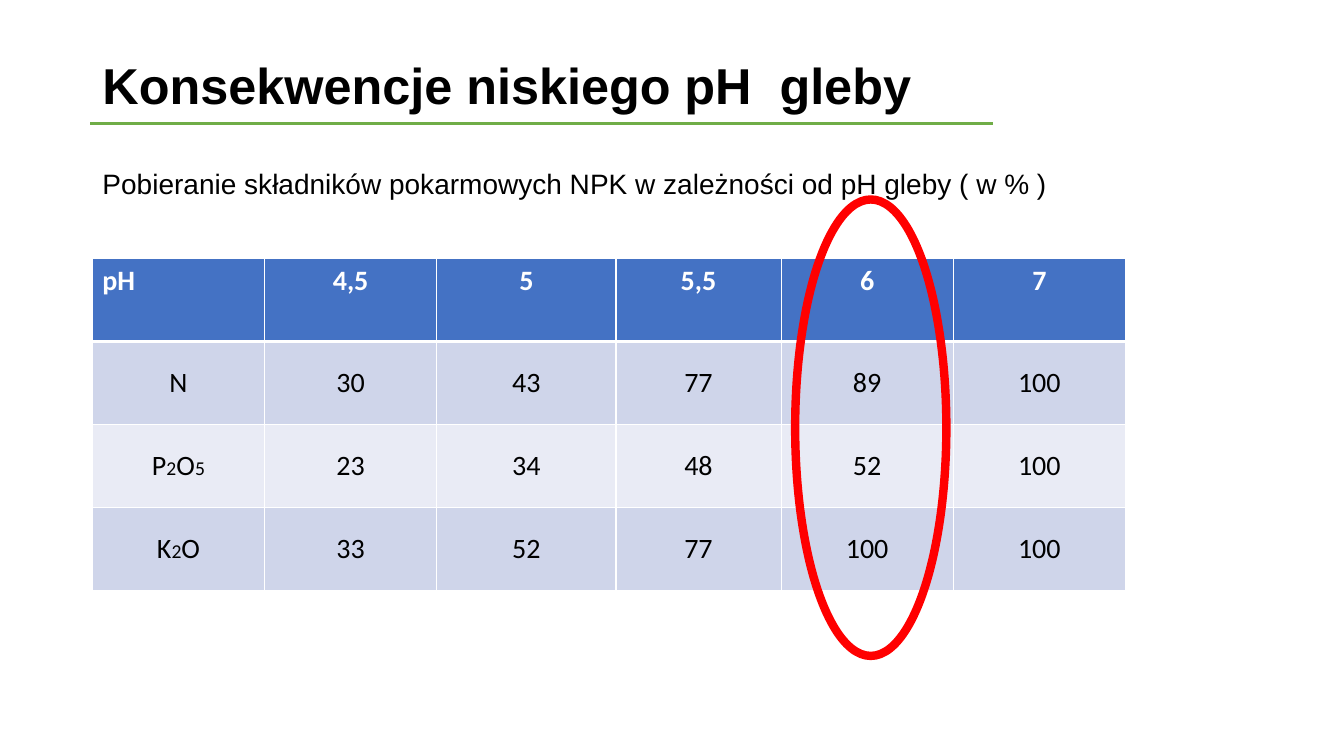
from dataclasses import dataclass

from lxml import etree
from pptx import Presentation
from pptx.dml.color import RGBColor
from pptx.enum.shapes import MSO_CONNECTOR, MSO_SHAPE
from pptx.enum.text import MSO_ANCHOR, MSO_AUTO_SIZE, PP_ALIGN
from pptx.oxml.ns import qn
from pptx.util import Pt

STRAIGHT = MSO_CONNECTOR.STRAIGHT
OVAL = MSO_SHAPE.OVAL
TOP, MIDDLE = MSO_ANCHOR.TOP, MSO_ANCHOR.MIDDLE
LEFT, CENTER = PP_ALIGN.LEFT, PP_ALIGN.CENTER
NO_FIT = MSO_AUTO_SIZE.NONE


@dataclass(frozen=True)
class Theme:
    ink: str = "000000"
    paper: str = "FFFFFF"
    rule: str = "70AD47"
    header: str = "4472C4"
    band_dark: str = "CFD5EA"
    band_light: str = "E9EBF5"
    highlight: str = "FF0000"
    heading_font: str = "Arial"
    table_font: str = "Calibri"
    title_size: int = 36
    text_size: int = 20
    index_size: int = 14


THEME = Theme()
COLUMN_WIDTHS = [123, 123, 128, 118, 123, 123]
UPTAKE = [
    ["pH", "4,5", "5", "5,5", "6", "7"],
    ["N", "30", "43", "77", "89", "100"],
    ["P2O5", "23", "34", "48", "52", "100"],
    ["K2O", "33", "52", "77", "100", "100"],
]


def color(value):
    return RGBColor.from_string(value)


def add_span(para, text, font, size, ink, bold=False):
    span = para.add_run()
    span.text = text
    span.font.name = font
    span.font.size = Pt(size)
    span.font.bold = bold
    span.font.color.rgb = color(ink)


def fill_placeholder(holder, box, text, size, anchor, bold=False):
    holder.left, holder.top, holder.width, holder.height = map(Pt, box)
    frame = holder.text_frame
    frame.word_wrap = True
    frame.auto_size = NO_FIT
    frame.vertical_anchor = anchor
    para = frame.paragraphs[0]
    properties = para._p.get_or_add_pPr()
    properties.set("marL", "0")
    properties.set("indent", "0")
    etree.SubElement(properties, qn("a:buNone"))
    para.alignment = LEFT
    para.line_spacing = 0.9
    para.space_before = Pt(0)
    add_span(para, text, THEME.heading_font, size, THEME.ink, bold)


def add_rule(page, box):
    left, top, width, _ = box
    rule = page.shapes.add_connector(
        STRAIGHT, Pt(left + width), Pt(top), Pt(left), Pt(top))
    rule.line.color.rgb = color(THEME.rule)
    rule.line.width = Pt(2)
    etree.SubElement(rule._element.spPr, qn("a:effectLst"))


def set_borders(cell, bottom_width):
    properties = cell._tc.get_or_add_tcPr()
    widths = {"lnL": 1, "lnR": 1, "lnT": 1, "lnB": bottom_width}
    for position, (side, width) in enumerate(widths.items()):
        border = etree.Element(qn(f"a:{side}"), w=str(Pt(width)))
        fill = etree.SubElement(border, qn("a:solidFill"))
        etree.SubElement(fill, qn("a:srgbClr"), val=THEME.paper)
        properties.insert(position, border)


def add_cell_text(cell, text, is_header, is_label):
    para = cell.text_frame.paragraphs[0]
    para.alignment = LEFT if is_header and is_label else CENTER
    ink = THEME.paper if is_header else THEME.ink
    spans = text if is_label and not is_header else [text]
    for part in spans:
        is_index = is_label and part.isdigit()
        size = THEME.index_size if is_index else THEME.text_size
        add_span(para, part, THEME.table_font, size, ink, is_header)


def add_uptake_table(page, box):
    grid = page.shapes.add_table(
        len(UPTAKE), len(COLUMN_WIDTHS), *map(Pt, box)).table
    for column, width in zip(grid.columns, COLUMN_WIDTHS):
        column.width = Pt(width)
    bands = [THEME.band_light, THEME.band_dark]
    for row, values in enumerate(UPTAKE):
        is_header = row == 0
        grid.rows[row].height = Pt(box[3] / len(UPTAKE))
        for column, text in enumerate(values):
            cell = grid.cell(row, column)
            cell.vertical_anchor = TOP if is_header else MIDDLE
            cell.fill.solid()
            cell.fill.fore_color.rgb = color(
                THEME.header if is_header else bands[row % 2])
            set_borders(cell, 3 if is_header else 1)
            add_cell_text(cell, text, is_header, column == 0)


def add_highlight(page, box):
    ring = page.shapes.add_shape(OVAL, *map(Pt, box))
    ring.shadow.inherit = False
    ring.fill.background()
    ring.line.color.rgb = color(THEME.highlight)
    ring.line.width = Pt(6)


def main():
    deck = Presentation()
    deck.slide_width, deck.slide_height = Pt(960), Pt(540)
    page = deck.slides.add_slide(deck.slide_layouts[1])
    add_rule(page, (64, 88, 645, 0))
    fill_placeholder(page.shapes.title, (66, 35, 677, 55.5),
                     "Konsekwencje niskiego pH  gleby",
                     THEME.title_size, MIDDLE, True)
    fill_placeholder(
        page.placeholders[1], (66, 118, 718, 40),
        "Pobieranie składników pokarmowych NPK w zależności od pH gleby ( w % )",
        THEME.text_size, TOP)
    add_uptake_table(page, (66, 184.5, sum(COLUMN_WIDTHS), 237.6))
    add_highlight(page, (568, 142.5, 108, 326))
    deck.save("out.pptx")


if __name__ == "__main__":
    main()
